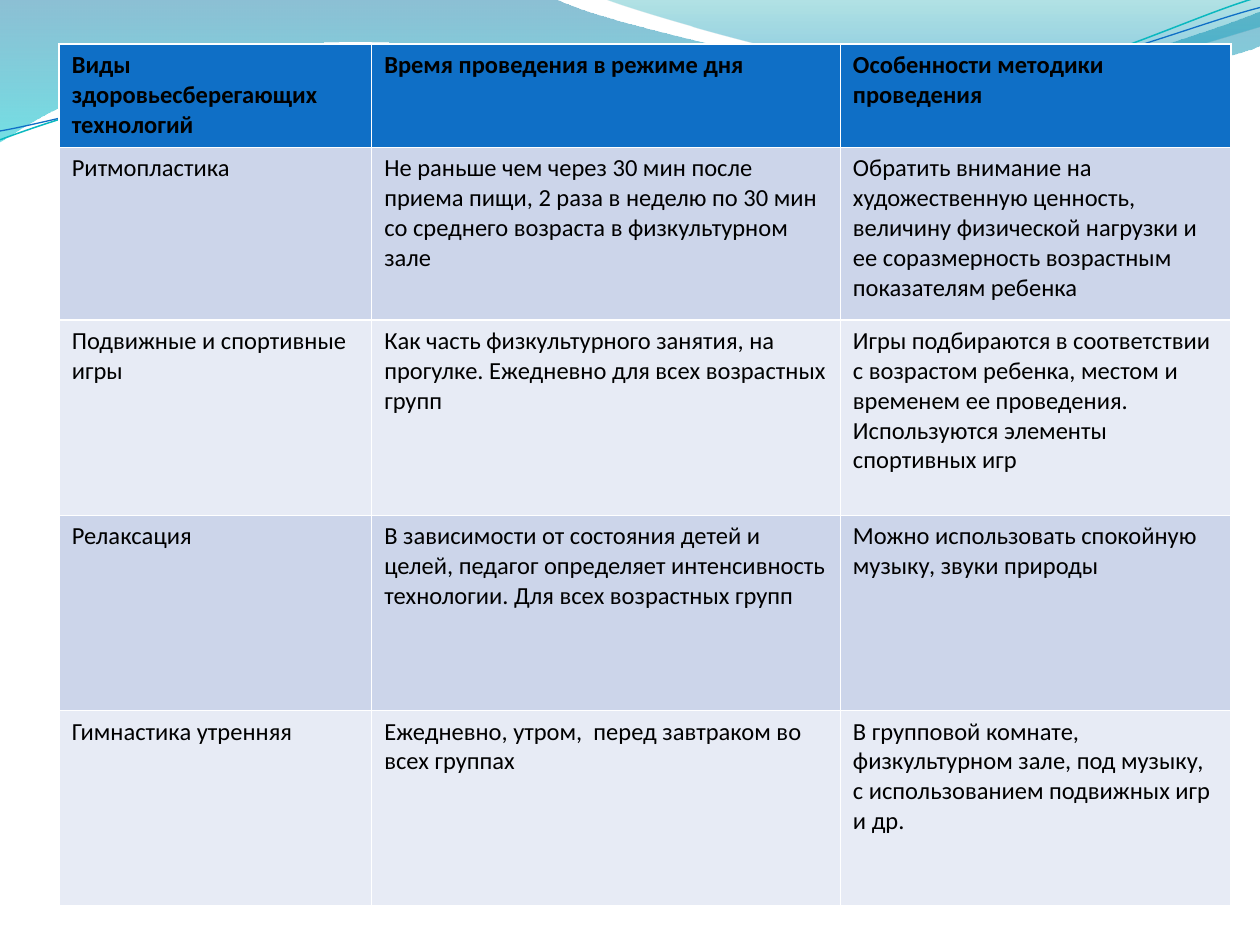
from dataclasses import dataclass
from math import cos, radians, sin

from lxml import etree
from pptx import Presentation
from pptx.dml.color import RGBColor
from pptx.oxml.ns import qn
from pptx.util import Inches, Pt

WHITE = RGBColor(0xFF, 0xFF, 0xFF)
BLACK = RGBColor(0x00, 0x00, 0x00)
BLUE = RGBColor(0x0F, 0x6F, 0xC6)
TEAL = RGBColor(0x0A, 0xB8, 0xBF)
BAND_DARK = RGBColor(0xCC, 0xD5, 0xEA)
BAND_LIGHT = RGBColor(0xE7, 0xEB, 0xF5)
SEA = RGBColor(0x00, 0x74, 0xA1)
AQUA = RGBColor(0x00, 0xC6, 0xCF)
LAGOON = RGBColor(0x00, 0xA1, 0xA9)
SKY = RGBColor(0x00, 0x8B, 0xBF)

W, H = 10, 7.5
FONT = "Calibri"
TILT = -2.7
COLS = (2.48, 3.72, 3.1)
ROWS = (0.82, 1.37, 1.55, 1.55, 1.55)
LEFT, TOP = 0.47, 0.35

TEXTS = (
    ("Виды здоровьесберегающих технологий",
     "Время проведения в режиме дня",
     "Особенности методики проведения"),
    ("Ритмопластика",
     "Не раньше чем через 30 мин после приема пищи, 2 раза в неделю по 30 мин "
     "со среднего возраста в физкультурном зале",
     "Обратить внимание на художественную ценность, величину физической нагрузки "
     "и ее соразмерность возрастным показателям ребенка"),
    ("Подвижные и спортивные игры",
     "Как часть физкультурного занятия, на прогулке. Ежедневно для всех "
     "возрастных групп",
     "Игры подбираются в соответствии с возрастом ребенка, местом и временем ее "
     "проведения. Используются элементы спортивных игр"),
    ("Релаксация",
     "В зависимости от состояния детей и целей, педагог определяет "
     "интенсивность технологии. Для всех возрастных групп",
     "Можно использовать спокойную музыку, звуки природы"),
    ("Гимнастика утренняя",
     "Ежедневно, утром,  перед завтраком во всех группах",
     "В групповой комнате, физкультурном зале, под музыку, с использованием "
     "подвижных игр и др."),
)


@dataclass(frozen=True)
class Stop:
    position: float
    color: RGBColor
    opacity: int


@dataclass(frozen=True)
class Wave:
    """Segments hold one point (a line) or three points (a Bézier curve).

    A tilted wave is rotated by TILT about its centre.
    """
    start: tuple
    segments: tuple
    stops: tuple = ()
    line: RGBColor | None = None
    width: float = 0
    centre: tuple | None = None


WAVES = (
    Wave((0, 0), (
        ((4.4, -0.01),),
        ((4.76, 0.17), (6.64, 0.63), (7.58, 0.63)),
        ((8.53, 0.63), (9.58, 0.26), (10, 0.09)),
        ((10.01, 0.36),),
        ((9.83, 0.44), (8.7, 0.76), (7.46, 0.75)),
        ((6.22, 0.75), (3.82, 0.28), (2.57, 0.34)),
        ((1.29, 0.36), (0.46, 0.83), (-0.01, 1.13)),
        ((0, 0),),
    ), stops=(Stop(0, SEA, 45), Stop(1, AQUA, 55))),
    Wave((4.79, -0.01), (
        ((5.09, 0.11), (6.82, 0.62), (7.69, 0.65)),
        ((8.56, 0.69), (9.61, 0.32), (10, 0.21)),
        ((10, 0),),
        ((4.79, -0.01),),
    ), stops=(Stop(0, LAGOON, 30), Stop(0.8, SKY, 45))),
    Wave((0, 1.11), (
        ((0.48, 0.93), (1.58, 0.57), (2.77, 0.52)),
        ((3.95, 0.47), (5.93, 0.89), (7.13, 0.8)),
        ((8.33, 0.71), (9.38, 0.15), (9.98, -0.02)),
    ), line=TEAL, width=0.85, centre=(4.99, 0.57)),
    Wave((0, 1.04), (
        ((0.47, 0.96), (1.64, 0.61), (2.83, 0.56)),
        ((4.03, 0.51), (5.97, 0.84), (7.17, 0.75)),
        ((8.36, 0.67), (9.41, 0.21), (10, 0.06)),
    ), line=BLUE, width=0.75, centre=(5, 0.59)),
)


def to_frame(point: tuple, centre: tuple | None) -> tuple:
    """Give a slide point in EMU, with the tilt about the centre undone."""
    x, y = point
    if centre:
        a = radians(-TILT)
        dx, dy = x - centre[0], y - centre[1]
        x = centre[0] + dx * cos(a) - dy * sin(a)
        y = centre[1] + dx * sin(a) + dy * cos(a)
    return Inches(x), Inches(y)


def bend(sp, segments: list) -> None:
    """Turn the line segments that have control points into Bézier curves."""
    for ln, seg in zip(list(sp._element.iter(qn("a:lnTo"))), segments):
        if len(seg) == 3:
            curve = etree.Element(qn("a:cubicBezTo"))
            for x, y in seg:
                etree.SubElement(curve, qn("a:pt"),
                                 x=str(x - sp.left), y=str(y - sp.top))
            ln.getparent().replace(ln, curve)


def fill_gradient(sp, stops: tuple) -> None:
    sp.fill.gradient()
    sp.fill.gradient_angle = 270
    for gs, stop in zip(sp.fill.gradient_stops, stops):
        gs.position = stop.position
        gs.color.rgb = stop.color
    for clr, stop in zip(sp._element.iter(qn("a:srgbClr")), stops):
        etree.SubElement(clr, qn("a:alpha"), val=str(stop.opacity * 1000))


def draw_wave(s, wave: Wave) -> None:
    segments = [[to_frame(p, wave.centre) for p in seg] for seg in wave.segments]
    builder = s.shapes.build_freeform(*to_frame(wave.start, wave.centre), scale=1)
    builder.add_line_segments([seg[-1] for seg in segments],
                              close=bool(wave.stops))
    sp = builder.convert_to_shape()
    bend(sp, segments)
    sp.shadow.inherit = False
    if wave.centre:
        sp.rotation = TILT
    if wave.stops:
        fill_gradient(sp, wave.stops)
        sp.line.fill.background()
    else:
        sp.fill.background()
        sp.line.color.rgb = wave.line
        sp.line.width = Pt(wave.width)


def write(tf, text: str, *, size: float, color: RGBColor, bold: bool) -> None:
    tf.word_wrap = True
    r = tf.paragraphs[0].add_run()
    r.text = text
    r.font.name = FONT
    r.font.size = Pt(size)
    r.font.bold = bold
    r.font.color.rgb = color


def set_borders(cell) -> None:
    """Draw white borders, placed before the cell's fill as the schema asks."""
    tc_pr = cell._tc.get_or_add_tcPr()
    for i, side in enumerate("LRTB"):
        ln = etree.Element(qn(f"a:ln{side}"), w=str(Pt(1)))
        fill = etree.SubElement(ln, qn("a:solidFill"))
        etree.SubElement(fill, qn("a:srgbClr"), val=str(WHITE))
        tc_pr.insert(i, ln)


def draw_table(s) -> None:
    table = s.shapes.add_table(
        len(ROWS), len(COLS), Inches(LEFT), Inches(TOP),
        Inches(sum(COLS)), Inches(sum(ROWS))).table
    for column, width in zip(table.columns, COLS):
        column.width = Inches(width)
    for i, (row, height) in enumerate(zip(table.rows, ROWS)):
        row.height = Inches(height)
        header = i == 0
        color = BLUE if header else BAND_DARK if i % 2 else BAND_LIGHT
        for cell, text in zip(row.cells, TEXTS[i]):
            cell.fill.solid()
            cell.fill.fore_color.rgb = color
            set_borders(cell)
            write(cell.text_frame, text, size=14, color=BLACK, bold=header)


def main() -> None:
    prs = Presentation()
    prs.slide_width, prs.slide_height = Inches(W), Inches(H)
    s = prs.slides.add_slide(prs.slide_layouts[6])
    s.background.fill.solid()
    s.background.fill.fore_color.rgb = WHITE
    for wave in WAVES:
        draw_wave(s, wave)
    draw_table(s)
    prs.save("out.pptx")


if __name__ == "__main__":
    main()
